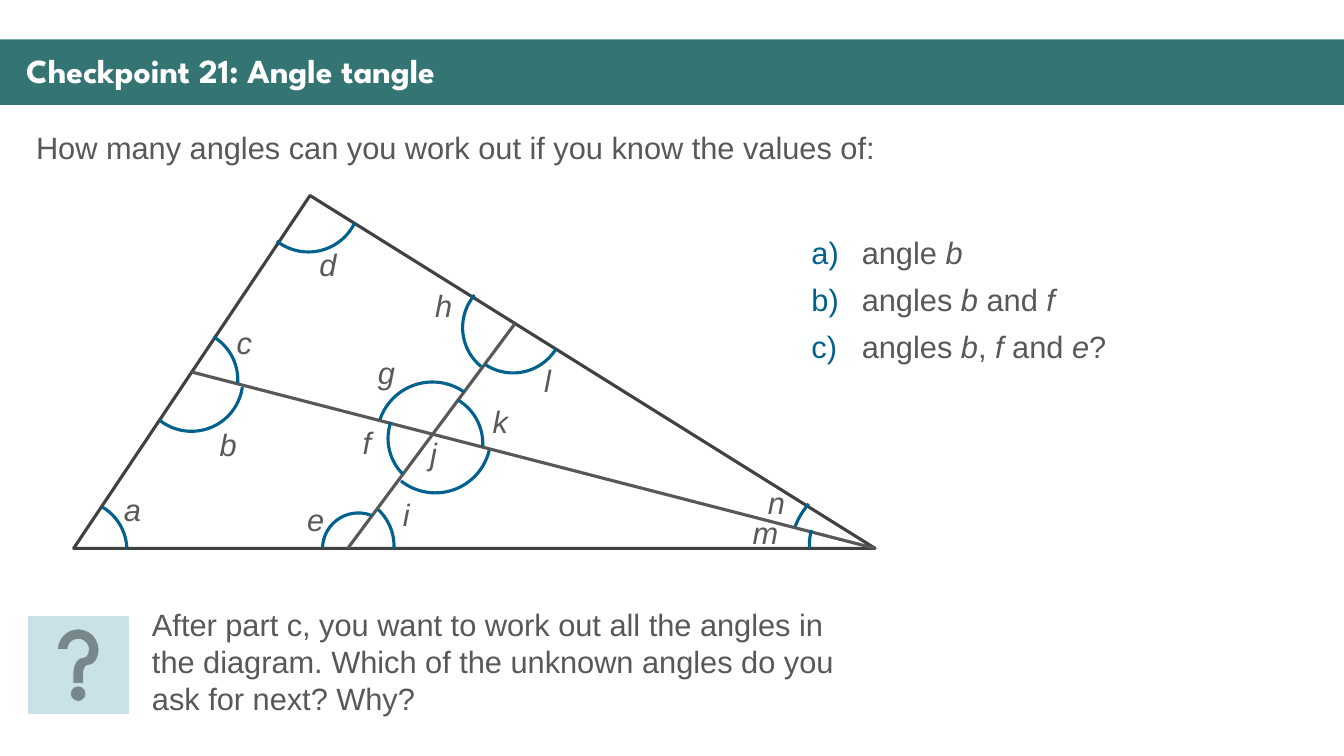
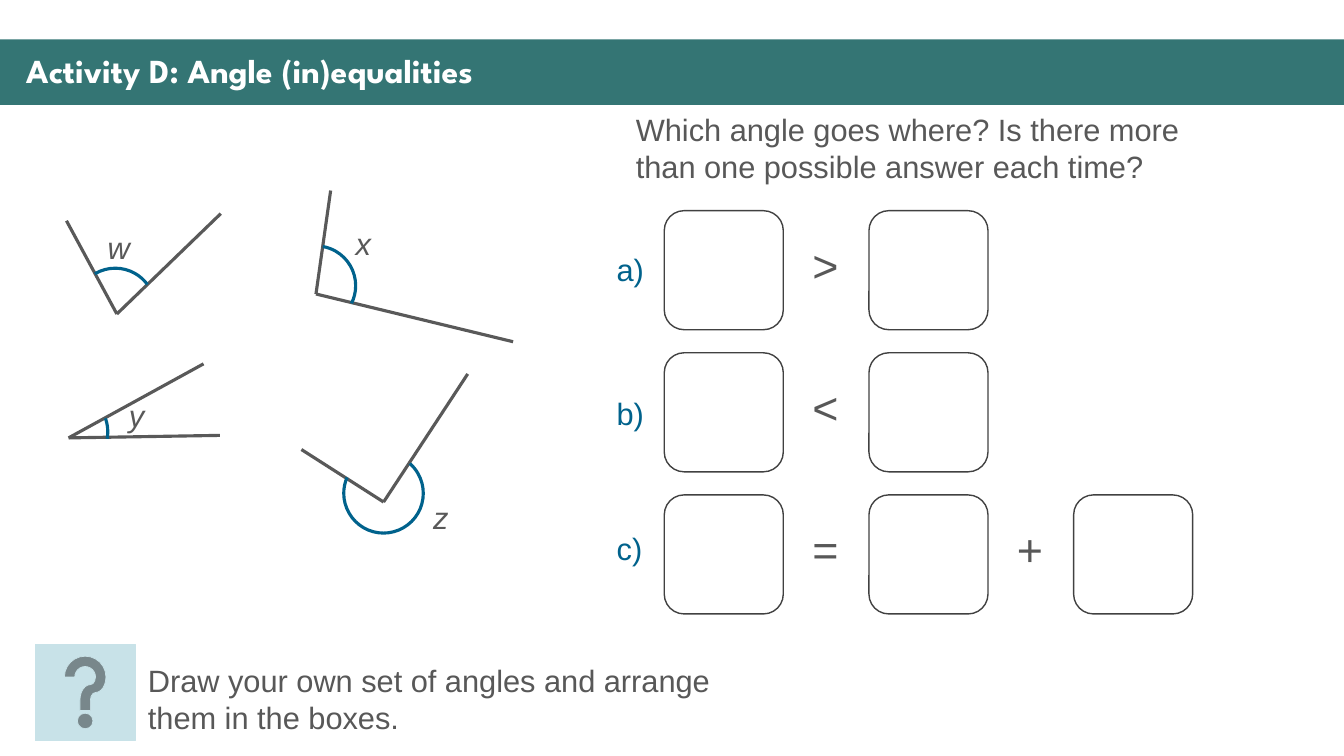
"""Build two geometry slides about working out and comparing angles."""
from lxml import etree
from pptx import Presentation
from pptx.dml.color import RGBColor
from pptx.enum.shapes import MSO_CONNECTOR as CONNECTOR, MSO_SHAPE as SHAPE
from pptx.enum.text import MSO_ANCHOR as ANCHOR, MSO_AUTO_SIZE as AUTO_SIZE, PP_ALIGN as ALIGN
from pptx.oxml.ns import qn
from pptx.util import Pt

COLORS = {"band": "347574", "title": "FFFFFF", "text": "585858", "letter": "595959",
          "outline": "414141", "accent": "00628C", "help": "C8E2E8"}
BODY_FONT, TITLE_FONT = "Arial", "League Spartan"
BODY_SIZE, TITLE_SIZE, SIGN_SIZE = 22, 24, 32
STROKE = 2.25

TANGLE = {
    "title": "Checkpoint 21: Angle tangle",
    "intro": ("How many angles can you work out if you know the values of:", 18.7, 88.6, 900),
    "prompt": ("After part c, you want to work out all the angles in the diagram. "
               "Which of the unknown angles do you ask for next? Why?", 101.5, 429.1, 523),
    "help": (20.2, 440.6),
}
KNOWN_ANGLES = ["angle *b*", "angles *b* and *f*", "angles *b*, *f* and *e*?"]
TRIANGLE = (52.6, 139.7, 572.4, 252)
APEX = 0.295
INNER_LINES = [((136.8, 265.7), (625, 391.7)), ((248.4, 391.7), (367.9, 231.1))]

# letter: (letter left, top), (arc centre), radius, start and end in degrees
TANGLE_ANGLES = {
    "a": ((81.4, 347), (54.7, 393.1), 36, 301.1, 358.1),
    "b": ((149.8, 300.2), (136.8, 271.4), 36.7, 8.1, 128.3),
    "c": ((162, 227.5), (133.9, 271.4), 36, 301.1, 3.7),
    "d": ((221, 172.1), (220.3, 143.3), 36.7, 25.7, 128),
    "e": ((212.4, 354.2), (256, 392), 25.6, 181.5, 292.3),
    "f": ((252, 298.8), (313.2, 313.2), 36, 135.5, 199),
    "g": ((262.8, 249.1), (308.9, 312.5), 39.6, 199, 305.2),
    "h": ((303.8, 200.9), (366.5, 234), 36, 129.4, 220.2),
    "i": ((280.8, 350.6), (245.5, 390.2), 36, 313.4, 3.7),
    "j": ((300.2, 306.7), (311, 312.5), 39.6, 13.4, 128.3),
    "k": ((344.9, 284.4), (308.9, 316.8), 36, 301.1, 3.7),
    "l": ((381.6, 254.9), (366.5, 230.4), 36, 31.8, 123.5),
    "m": ((530.6, 363.6), (614.2, 388.8), 36, 175, 196.4),
    "n": ((541.4, 342), (618.5, 395.3), 54, 200.8, 220.9),
}

INEQUALITIES = {
    "title": "Activity D: Angle (in)equalities",
    "intro": ("Which angle goes where? Is there more than one possible answer each time?",
              447.1, 75.6, 416),
    "prompt": ("Draw your own set of angles and arrange them in the boxes.", 98.6, 469.4, 416),
    "help": (25.2, 460.1),
}
SEPARATE_ANGLES = {
    "w": ((69.8, 159.8), (82.4, 220), 28.4, 239.2, 323.8),
    "x": ((247, 157), (225.7, 204.1), 28.4, 280, 26.3),
    "y": ((85, 280.1), (48.6, 308.5), 28.4, 340.1, 10.1),
    "z": ((302.4, 352.8), (274, 352.4), 28.4, 311.4, 203.5),
}
ANGLE_ARMS = [
    ((83.5, 224.3), (47.5, 157.7), (157.7, 152.6)),
    ((225.7, 210), (236.2, 136.1), (366.5, 244.1)),
    ((49, 312.8), (145.4, 259.9), (157, 311)),
    ((274, 358.6), (215.3, 321.1), (334.1, 267.1)),
]
BOX_ROWS = [("a)", 175.7, ">"), ("b)", 278.6, "<"), ("c)", 375.1, "=+")]
BOX_LEFT, BOX_TOP, BOX_SIZE = 474.5, 150.5, 85
COLUMN_STEP, ROW_STEP = 146.2, 101.5


def color(name):
    return RGBColor.from_string(COLORS[name])


def format_run(run, size=BODY_SIZE, tint="text", font=BODY_FONT, bold=False, italic=False):
    run.font.name, run.font.size = font, Pt(size)
    run.font.bold, run.font.italic = bold, italic
    run.font.color.rgb = color(tint)


def add_text(slide, text, left, top, width, height=34, **style):
    text_frame = slide.shapes.add_textbox(Pt(left), Pt(top), Pt(width), Pt(height)).text_frame
    text_frame.word_wrap = True
    text_frame.text = text
    format_run(text_frame.paragraphs[0].runs[0], **style)


def add_figure(slide, kind, left, top, width, height, fill=None, line=None, weight=1):
    shape = slide.shapes.add_shape(kind, Pt(left), Pt(top), Pt(width), Pt(height))
    shape.shadow.inherit = False
    if fill:
        shape.fill.solid()
        shape.fill.fore_color.rgb = color(fill)
    else:
        shape.fill.background()
    if line:
        shape.line.color.rgb = color(line)
        shape.line.width = Pt(weight)
    else:
        shape.line.fill.background()
    return shape


def add_line(slide, start, end, tint):
    points = [Pt(value) for value in (*start, *end)]
    connector = slide.shapes.add_connector(CONNECTOR.STRAIGHT, *points)
    connector.line.color.rgb = color(tint)
    connector.line.width = Pt(STROKE)
    etree.SubElement(connector.element.spPr, qn("a:effectLst"))


def add_angles(slide, angles):
    for letter, (corner, (x, y), radius, start, end) in angles.items():
        arc = add_figure(slide, SHAPE.ARC, x - radius, y - radius, 2 * radius, 2 * radius,
                         line="accent", weight=STROKE)
        for index, degrees in enumerate((start, end)):
            arc.adjustments[index] = degrees * 0.6
        add_text(slide, letter, *corner, 36, tint="letter", italic=True)


def set_up_master(presentation, slide):
    master = presentation.slide_master
    band = add_figure(slide, SHAPE.RECTANGLE, 0, 28.2, 960, 46.8, fill="band")
    band.element.xpath(".//p:cNvPr")[0].set("id", "99")
    master.shapes.element.insert(2, band.element)
    title = master.placeholders[0]
    title.left, title.top, title.width, title.height = Pt(11.5), Pt(34.6), Pt(939), Pt(33.8)


def add_page(presentation, layout_index, content):
    slide = presentation.slides.add_slide(presentation.slide_layouts[layout_index])
    text_frame = slide.shapes.title.text_frame
    text_frame.text = content["title"]
    text_frame.vertical_anchor = ANCHOR.MIDDLE
    text_frame.auto_size = AUTO_SIZE.NONE
    paragraph = text_frame.paragraphs[0]
    paragraph.alignment = ALIGN.LEFT
    paragraph.line_spacing = 0.9
    format_run(paragraph.runs[0], TITLE_SIZE, "title", TITLE_FONT, bold=True)
    add_text(slide, *content["intro"])
    add_text(slide, *content["prompt"])
    add_figure(slide, SHAPE.ACTION_BUTTON_HELP, *content["help"], 71.3, 69.1,
               fill="help", line="help", weight=0.5)
    return slide


def fill_lettered_list(placeholder, items):
    placeholder.left, placeholder.top = Pt(572.4), Pt(166.3)
    placeholder.width, placeholder.height = Pt(298), Pt(152.6)
    text_frame = placeholder.text_frame
    text_frame.auto_size = AUTO_SIZE.NONE
    text_frame.text = "\n".join(item.replace("*", "") for item in items)
    for paragraph, item in zip(text_frame.paragraphs, items):
        paragraph.clear()
        paragraph.line_spacing = 0.9
        paragraph.space_before = Pt(10)
        for index, part in enumerate(item.split("*")):
            if part:
                run = paragraph.add_run()
                run.text = part
                format_run(run, italic=index % 2 == 1)
        properties = paragraph._p.get_or_add_pPr()
        properties.set("marL", str(Pt(36)))
        properties.set("indent", str(-Pt(36)))
        bullet_color = etree.SubElement(properties, qn("a:buClr"))
        etree.SubElement(bullet_color, qn("a:srgbClr"), val=COLORS["accent"])
        etree.SubElement(properties, qn("a:buFont"), typeface=BODY_FONT)
        etree.SubElement(properties, qn("a:buAutoNum"), type="alphaLcParenR")


def add_box_rows(slide):
    for row, (label, label_top, signs) in enumerate(BOX_ROWS):
        top = BOX_TOP + row * ROW_STEP
        add_text(slide, label, 433.4, label_top, 40, tint="accent")
        for column in range(len(signs) + 1):
            left = BOX_LEFT + column * COLUMN_STEP
            add_figure(slide, SHAPE.ROUNDED_RECTANGLE, left, top, BOX_SIZE, BOX_SIZE,
                       line="outline")
        for column, sign in enumerate(signs):
            left = BOX_LEFT + column * COLUMN_STEP + 98.6
            add_text(slide, sign, left, top + 15.8, 40, 46, size=SIGN_SIZE)


def main():
    presentation = Presentation()
    presentation.slide_width, presentation.slide_height = Pt(960), Pt(540)

    tangle = add_page(presentation, 1, TANGLE)
    set_up_master(presentation, tangle)
    fill_lettered_list(tangle.placeholders[1], KNOWN_ANGLES)
    triangle = add_figure(tangle, SHAPE.ISOSCELES_TRIANGLE, *TRIANGLE,
                          line="outline", weight=STROKE)
    triangle.adjustments[0] = APEX
    for start, end in INNER_LINES:
        add_line(tangle, start, end, "text")
    add_angles(tangle, TANGLE_ANGLES)

    inequalities = add_page(presentation, 5, INEQUALITIES)
    for vertex, *ends in ANGLE_ARMS:
        for end in ends:
            add_line(inequalities, vertex, end, "letter")
    add_angles(inequalities, SEPARATE_ANGLES)
    add_box_rows(inequalities)

    presentation.save("out.pptx")


if __name__ == "__main__":
    main()
